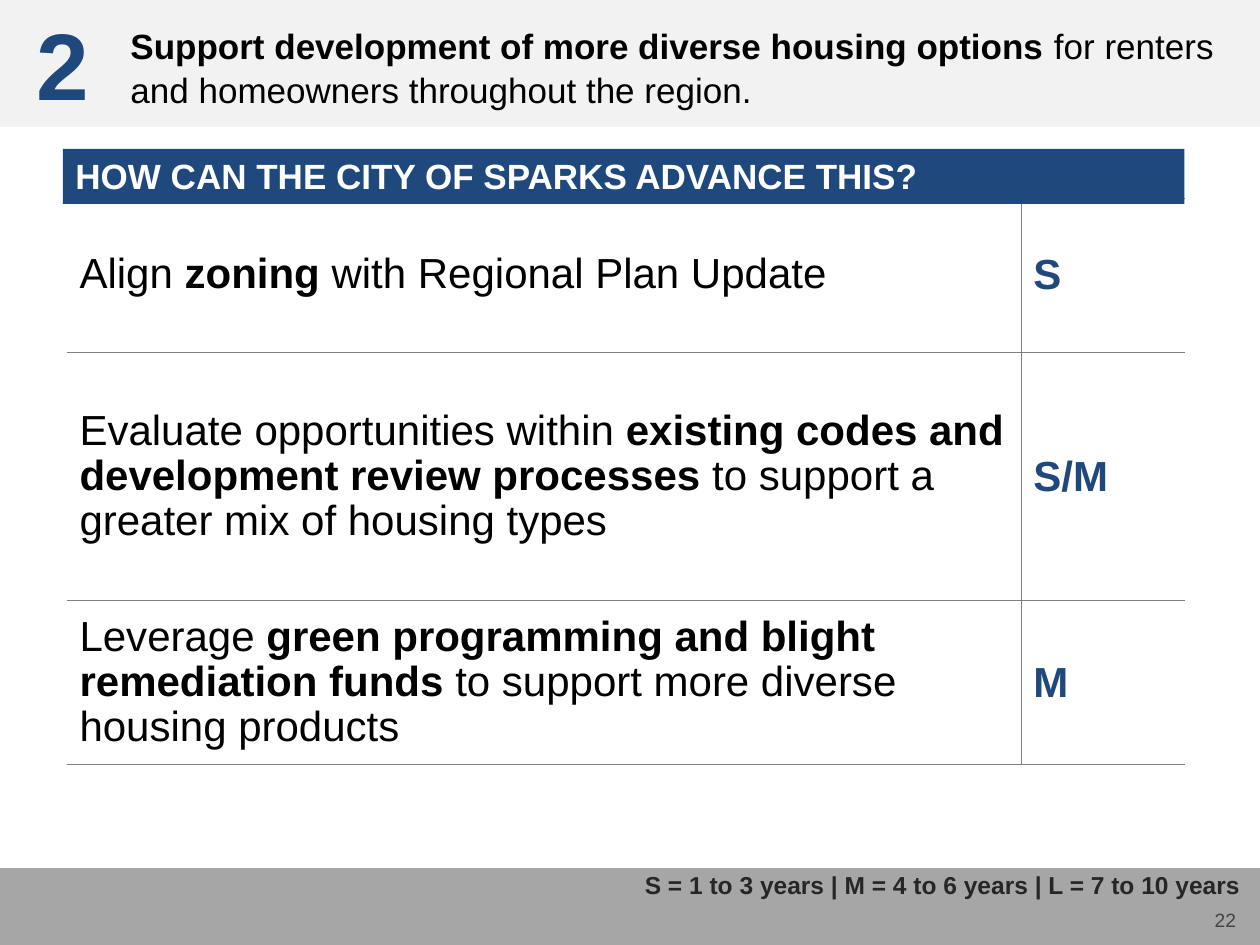
import pptx
import pptx.dml.color
import pptx.enum.shapes
import pptx.enum.text
import pptx.oxml
import pptx.oxml.ns
import pptx.util

Cm, Pt = pptx.util.Cm, pptx.util.Pt
RGB = pptx.dml.color.RGBColor.from_string
ALIGN = pptx.enum.text.PP_ALIGN
ANCHOR = pptx.enum.text.MSO_ANCHOR
COLORS = {
    "navy": "1F497D", "black": "000000", "white": "FFFFFF", "band": "F2F2F2",
    "footer": "A6A6A6", "rule": "808080", "legend": "262626", "number": "424342",
}


def write(frame, *runs, size, color="black", bold=(), align=ALIGN.LEFT, spacing=None):
    """Write runs into one paragraph; bold lists the indexes of bold runs."""
    frame.word_wrap = True
    paragraph = frame.paragraphs[0]
    paragraph.alignment = align
    paragraph.line_spacing = spacing
    for index, text in enumerate(runs):
        run = paragraph.add_run()
        run.text = text
        run.font.name = "Arial"
        run.font.size = Pt(size)
        run.font.bold = index in bold
        run.font.color.rgb = RGB(COLORS[color])


def add_bar(left, top, width, height, color):
    bar = slide.shapes.add_shape(
        pptx.enum.shapes.MSO_SHAPE.RECTANGLE, Cm(left), Cm(top), Cm(width), Cm(height))
    bar.shadow.inherit = False
    bar.fill.solid()
    bar.fill.fore_color.rgb = RGB(COLORS[color])
    bar.line.fill.background()
    return bar


deck = pptx.Presentation()
deck.slide_width, deck.slide_height = Cm(25.4), Cm(19.05)
slide = deck.slides.add_slide(deck.slide_layouts[6])

# Footer and heading bands
add_bar(0, 17.5, 25.4, 1.55, "footer")
add_bar(0, 0, 25.4, 2.56, "band")

# Heading and its number
heading = slide.shapes.add_textbox(Cm(2.38), Cm(0.33), Cm(22.53), Cm(1.96))
write(heading.text_frame, "Support development of more diverse housing options ",
      "for renters and homeowners throughout the region.", size=20, bold=[0], spacing=1.05)
goal = slide.shapes.add_textbox(Cm(0.48), 0, Cm(1.58), Cm(2.56))
write(goal.text_frame, "2", size=54, color="navy", bold=[0])

# Page number and time frame legend
page = slide.shapes.add_textbox(Cm(19), Cm(17.75), Cm(5.92), Cm(1.02))
page.text_frame.margin_left = page.text_frame.margin_right = 0
page.text_frame.margin_top = page.text_frame.margin_bottom = 0
page.text_frame.vertical_anchor = ANCHOR.BOTTOM
write(page.text_frame, "22", size=11, color="number", align=ALIGN.RIGHT)
legend = slide.shapes.add_textbox(Cm(12.75), Cm(17.42), Cm(12.6), Cm(0.86))
write(legend.text_frame, "S = 1 to 3 years | M = 4 to 6 years | L = 7 to 10 years",
      size=14, color="legend", bold=[0])

# Table of actions and time frames
actions = [
    (3.12, "S", ["Align ", "zoning", " with Regional Plan Update"]),
    (5, "S/M", ["Evaluate opportunities within ",
                "existing codes and development review processes ",
                "to support a greater mix of housing types"]),
    (3.3, "M", ["Leverage ", "green programming and blight remediation funds ",
                "to support more diverse housing products"]),
]
table = slide.shapes.add_table(
    len(actions), 2, Cm(1.35), Cm(3.99), Cm(22.53), Cm(11.42)).table
table.first_row = table.horz_banding = False
table.columns[0].width, table.columns[1].width = Cm(19.23), Cm(3.3)

for row, (height, term, action) in enumerate(actions):
    table.rows[row].height = Cm(height)
    action_cell, term_cell = table.cell(row, 0), table.cell(row, 1)
    write(action_cell.text_frame, *action, size=24, bold=[1], spacing=0.96)
    write(term_cell.text_frame, term, size=24, color="navy", bold=[0])
    for cell, inner in (action_cell, "lnR"), (term_cell, "lnL"):
        cell.vertical_anchor = ANCHOR.MIDDLE
        properties = cell._tc.get_or_add_tcPr()
        for edge in ("lnL", "lnR", "lnT", "lnB"):
            ruled = edge in (inner, "lnT", "lnB")
            paint = (f'<a:solidFill><a:srgbClr val="{COLORS["rule"]}"/></a:solidFill>'
                     if ruled else "<a:noFill/>")
            properties.append(pptx.oxml.parse_xml(
                f'<a:{edge} {pptx.oxml.ns.nsdecls("a")} w="{Pt(0.5)}">{paint}</a:{edge}>'))
        cell.fill.background()

# Table heading bar
question = add_bar(1.27, 3, 22.61, 1.11, "navy")
question.text_frame.vertical_anchor = ANCHOR.TOP
write(question.text_frame, "HOW CAN THE CITY OF SPARKS ADVANCE THIS?",
      size=20, color="white", bold=[0])

deck.save("out.pptx")
